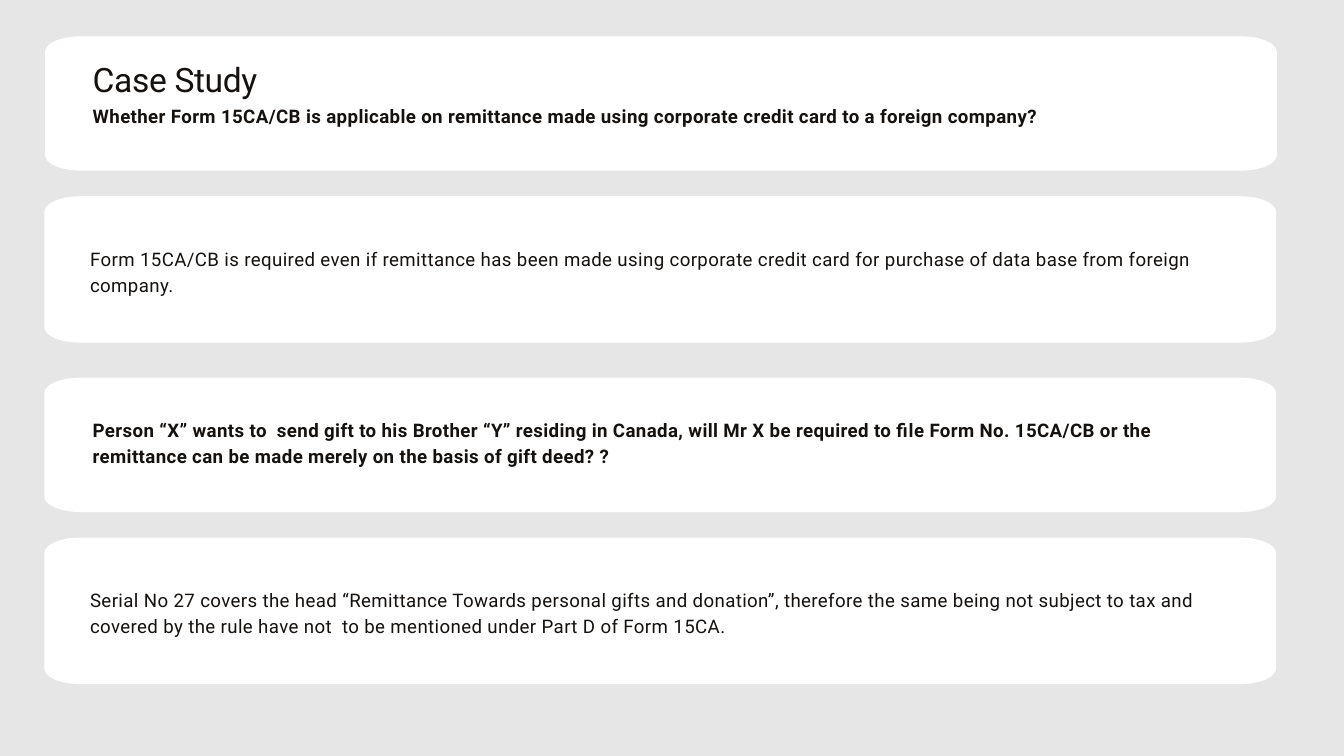
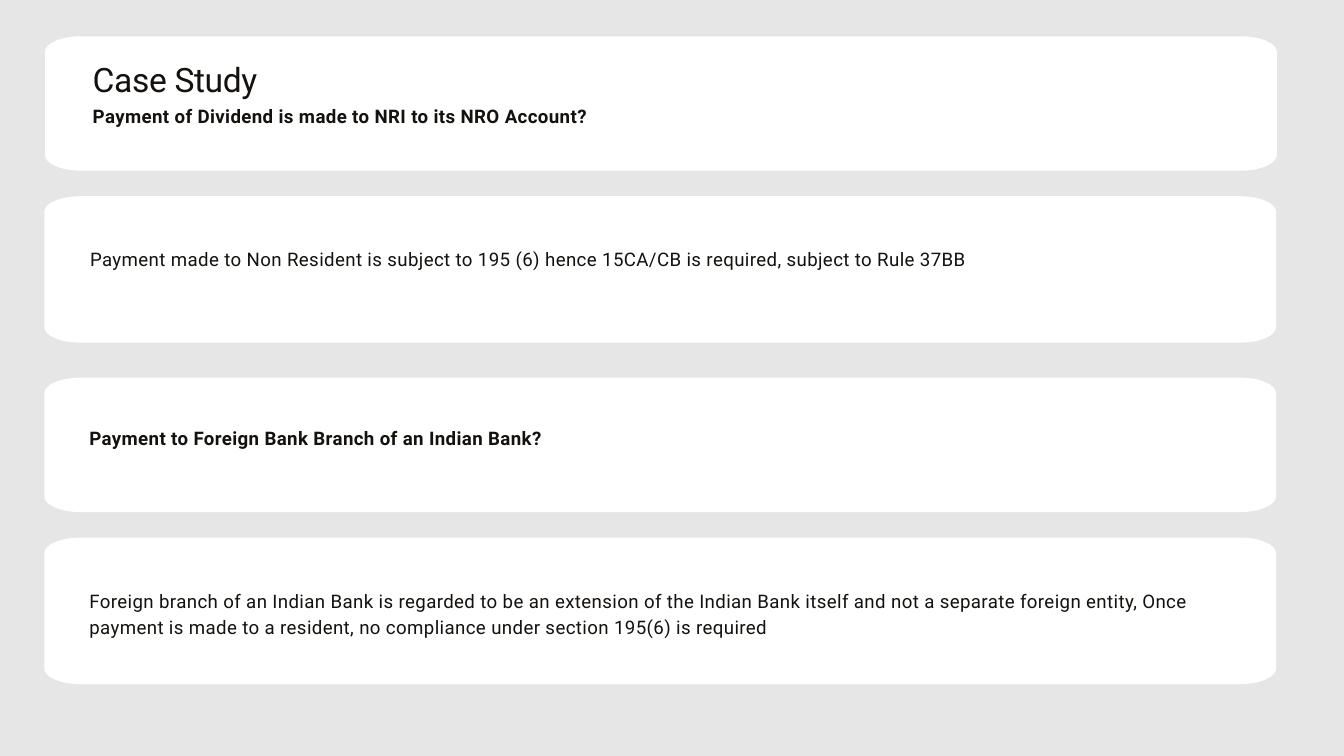
from lxml.etree import SubElement
from pptx import Presentation
from pptx.dml.color import RGBColor
from pptx.enum.text import MSO_ANCHOR, MSO_AUTO_SIZE, PP_ALIGN
from pptx.oxml.ns import qn
from pptx.util import Inches, Pt

GREY = RGBColor(0xE6, 0xE6, 0xE6)
WHITE = RGBColor(0xFF, 0xFF, 0xFF)
INK = RGBColor(0x14, 0x11, 0x0F)

TITLE = "Case Study"
CASES = [
    [
        (1.38, 1.51, 0.36, "Whether Form 15CA/CB is applicable on remittance made using corporate credit card to a foreign company?"),
        (1.34, 3.63, 0.76, "Form 15CA/CB is required even if remittance has been made using corporate credit card for purchase of data base from foreign company."),
        (1.38, 6.17, 0.76, "Person “X” wants to  send gift to his Brother “Y” residing in Canada, will Mr X be required to file Form No. 15CA/CB or the remittance can be made merely on the basis of gift deed? ?"),
        (1.34, 8.71, 0.76, "Serial No 27 covers the head “Remittance Towards personal gifts and donation”, therefore the same being not subject to tax and covered by the rule have not  to be mentioned under Part D of Form 15CA."),
    ],
    [
        (1.38, 1.51, 0.36, "Payment of Dividend is made to NRI to its NRO Account?"),
        (1.34, 3.63, 0.36, "Payment made to Non Resident is subject to 195 (6) hence 15CA/CB is required, subject to Rule 37BB"),
        (1.33, 6.3, 0.36, "Payment to Foreign Bank Branch of an Indian Bank?"),
        (1.33, 8.72, 0.76, "Foreign branch of an Indian Bank is regarded to be an extension of the Indian Bank itself and not a separate foreign entity, Once payment is made to a resident, no compliance under section 195(6) is required"),
    ],
]

CARDS = [(0.67, 0.54, 2), (0.66, 2.92, 2.18), (0.66, 5.62, 2), (0.66, 8, 2.18)]
CARD_W, TEXT_W = 18.33, 16.97
CURVE_X, CURVE_Y, PULL = 0.54, 0.23, 0.55

FRAME = {
    "margin_left": 0, "margin_top": 0, "margin_right": 0, "margin_bottom": 0,
    "word_wrap": True, "vertical_anchor": MSO_ANCHOR.TOP,
    "auto_size": MSO_AUTO_SIZE.SHAPE_TO_FIT_TEXT,
}
HEAD = {"name": "Roboto", "size": Pt(36), "bold": False}
ASK = {"name": "Roboto", "size": Pt(20), "bold": True}
REPLY = {**ASK, "bold": False}


def apply(item, style):
    for key, value in style.items():
        setattr(item, key, value)


def place(shape, left, top, width, height):
    names = ("left", "top", "width", "height")
    apply(shape, dict(zip(names, map(Inches, (left, top, width, height)))))


def write(shape, text, font, lead, space):
    apply(shape.text_frame, FRAME)
    para = shape.text_frame.paragraphs[0]
    apply(para, {"alignment": PP_ALIGN.LEFT, "line_spacing": Pt(lead)})
    run = para.add_run()
    run.text = text
    apply(run.font, font)
    run.font.color.rgb = INK
    run._r.get_or_add_rPr().set("spc", str(space))


def bend(card):
    steps = card.element.findall(".//" + qn("a:lnTo"))
    for index, step in enumerate(steps[1::2]):
        start, end = (
            (int(node[0].get("x")), int(node[0].get("y")))
            for node in (step.getprevious(), step)
        )
        tip = (start[0], end[1]) if index % 2 else (end[0], start[1])
        arc = SubElement(step.getparent(), qn("a:cubicBezTo"))
        pulls = [[round(a + PULL * (b - a)) for a, b in zip(side, tip)] for side in (start, end)]
        for x, y in (*pulls, end):
            SubElement(arc, qn("a:pt"), x=str(x), y=str(y))
        step.getparent().replace(step, arc)


def add_card(slide, left, top, height):
    right, base = left + CARD_W, top + height
    near, far = left + CURVE_X, right - CURVE_X
    high, low = top + CURVE_Y, base - CURVE_Y
    points = [
        (Inches(x), Inches(y)) for x, y in (
            (far, base), (near, base), (left, low), (left, high),
            (near, top), (far, top), (right, high), (right, low),
        )
    ]
    pen = slide.shapes.build_freeform(*points[0])
    pen.add_line_segments(points[1:] + points[:1], close=False)
    card = pen.convert_to_shape()
    bend(card)
    SubElement(card.element.find(".//" + qn("a:path")), qn("a:close"))
    card.shadow.inherit = False
    card.fill.solid()
    card.fill.fore_color.rgb = WHITE
    card.line.fill.background()


def add_case(deck, parts):
    slide = deck.slides.add_slide(deck.slide_layouts[5])
    for index, (card, part) in enumerate(zip(CARDS, parts)):
        add_card(slide, *card)
        left, top, height, text = part
        box = slide.shapes.add_textbox(0, 0, 0, 0)
        place(box, left, top, TEXT_W, height)
        write(box, text, REPLY if index % 2 else ASK, 28, 40)
    title = slide.shapes.title
    title.element.getparent().append(title.element)
    place(title, 1.38, 0.72, 16.05, 0.47)
    write(title, TITLE, HEAD, 54.6, -40)


def main():
    deck = Presentation()
    apply(deck, {"slide_width": Inches(20), "slide_height": Inches(11.25)})
    back = deck.slide_master.background.fill
    back.solid()
    back.fore_color.rgb = GREY
    for parts in CASES:
        add_case(deck, parts)
    deck.save("out.pptx")


if __name__ == "__main__":
    main()
